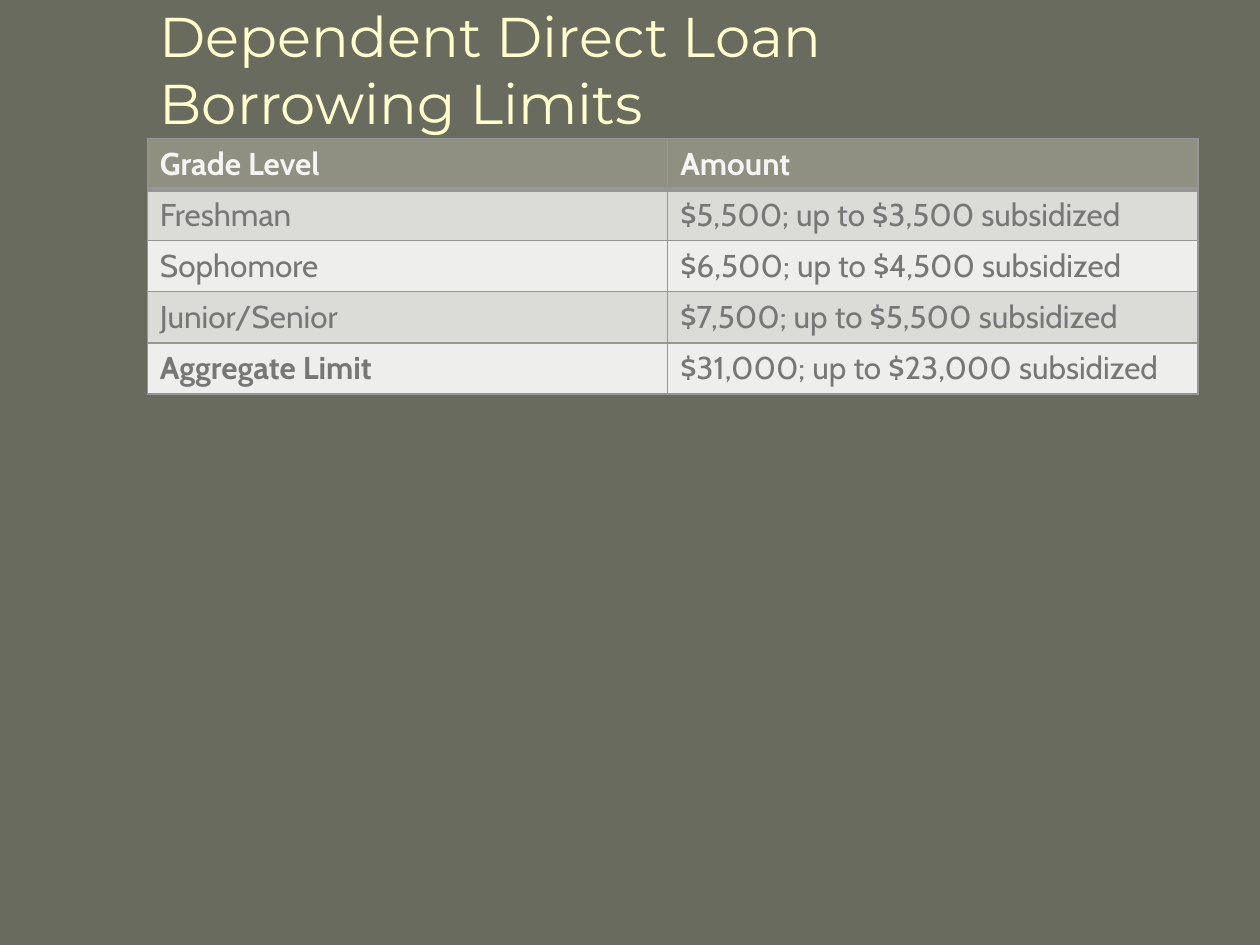
"""Build the slide on borrowing limits for dependent direct loans."""
from dataclasses import dataclass

from lxml.etree import SubElement
from pptx import Presentation
from pptx.dml.color import RGBColor
from pptx.enum.text import MSO_ANCHOR as Anchor
from pptx.oxml.ns import qn
from pptx.util import Cm, Pt

BACKGROUND, TITLE_COLOUR, GRID = "686B5D", "FFFFCC", "969696"
HEADER_FILL, HEADER_INK, BODY_INK = "909082", "F4F4F3", "777777"
BANDS = ("DBDBD8", "EEEEED")
LEFT = Cm(2.97)
COLUMN_WIDTHS = (Cm(10.49), Cm(10.69))
ROW_HEIGHT = Cm(1.03)


@dataclass(frozen=True)
class LoanLimit:
    grade: str
    amount: str
    bold_grade: bool = False


LIMITS = (
    LoanLimit("Freshman", "$5,500; up to $3,500 subsidized"),
    LoanLimit("Sophomore", "$6,500; up to $4,500 subsidized"),
    LoanLimit("Junior/Senior", "$7,500; up to $5,500 subsidized"),
    LoanLimit("Aggregate Limit", "$31,000; up to $23,000 subsidized", True),
)


def paint(colour_format, hex_colour: str) -> None:
    colour_format.rgb = RGBColor.from_string(hex_colour)


def fill_solid(fill, hex_colour: str) -> None:
    fill.solid()
    paint(fill.fore_color, hex_colour)


def write(frame, text: str, *, font: str = "Cabin", size: int = 18,
          colour: str = BODY_INK, bold: bool = False) -> None:
    frame.word_wrap = True
    run = frame.paragraphs[0].add_run()
    run.text = text
    run.font.name, run.font.size, run.font.bold = font, Pt(size), bold
    paint(run.font.color, colour)


def add_borders(cell, top: int = 1, bottom: int = 1) -> None:
    properties = cell._tc.get_or_add_tcPr()
    for edge, points in (("L", 1), ("R", 1), ("T", top), ("B", bottom)):
        line = SubElement(properties, qn(f"a:ln{edge}"), w=str(Pt(points)))
        SubElement(SubElement(line, qn("a:solidFill")), qn("a:srgbClr"), val=GRID)


def add_title(slide, text: str) -> None:
    title = slide.shapes.add_textbox(LEFT, Cm(0.43), Cm(19.89), Cm(1.91)).text_frame
    title.vertical_anchor = Anchor.MIDDLE
    write(title, text, font="Montserrat", size=32, colour=TITLE_COLOUR)


def add_limits(slide, limits: tuple[LoanLimit, ...]) -> None:
    row_count = len(limits) + 1
    table = slide.shapes.add_table(row_count, 2, LEFT, Cm(2.79), sum(COLUMN_WIDTHS),
                                   ROW_HEIGHT * row_count).table
    for column, width in zip(table.columns, COLUMN_WIDTHS):
        column.width = width
    for cell, heading in zip(table.rows[0].cells, ("Grade Level", "Amount")):
        add_borders(cell, bottom=3)
        fill_solid(cell.fill, HEADER_FILL)
        write(cell.text_frame, heading, colour=HEADER_INK, bold=True)
    for index, limit in enumerate(limits):
        entries = ((limit.grade, limit.bold_grade), (limit.amount, False))
        for cell, (text, bold) in zip(table.rows[index + 1].cells, entries):
            add_borders(cell, top=1 if index else 3)
            fill_solid(cell.fill, BANDS[index % 2])
            write(cell.text_frame, text, bold=bold)


def main() -> None:
    deck = Presentation()
    deck.slide_width, deck.slide_height = Cm(25.4), Cm(19.05)
    slide = deck.slides.add_slide(deck.slide_layouts[6])
    fill_solid(slide.background.fill, BACKGROUND)
    add_title(slide, "Dependent Direct Loan Borrowing Limits")
    add_limits(slide, LIMITS)
    deck.save("out.pptx")


if __name__ == "__main__":
    main()
